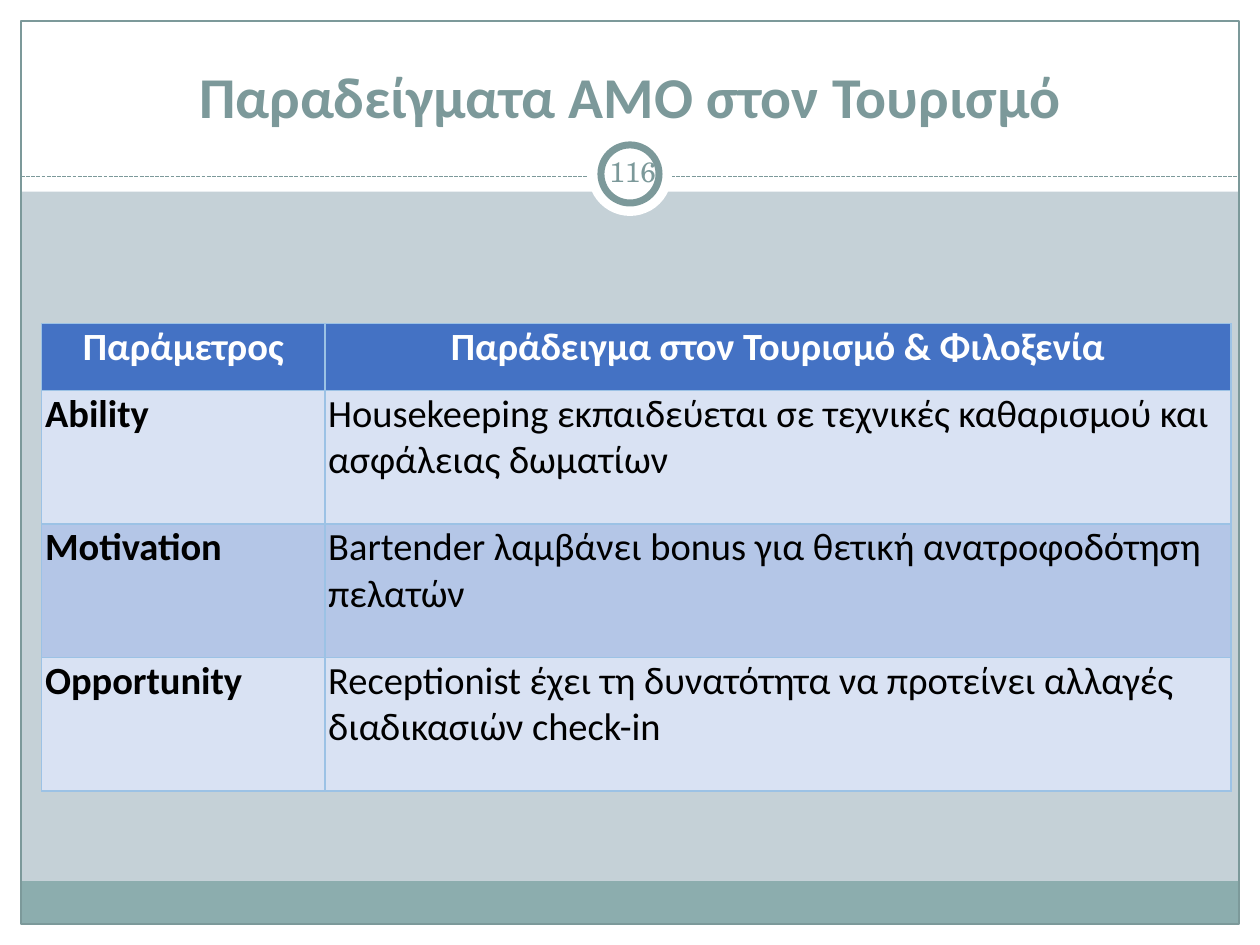
from dataclasses import dataclass
from typing import Optional

from lxml import etree
from pptx import Presentation
from pptx.dml.color import RGBColor
from pptx.enum.dml import MSO_LINE
from pptx.enum.shapes import MSO_CONNECTOR, MSO_SHAPE
from pptx.enum.text import MSO_ANCHOR, PP_ALIGN
from pptx.oxml.ns import qn
from pptx.util import Pt

RECT, OVAL = MSO_SHAPE.RECTANGLE, MSO_SHAPE.OVAL
STRAIGHT = MSO_CONNECTOR.STRAIGHT
DASH = MSO_LINE.SQUARE_DOT
LEFT, CENTER = PP_ALIGN.LEFT, PP_ALIGN.CENTER
TOP, MIDDLE, BOTTOM = MSO_ANCHOR.TOP, MSO_ANCHOR.MIDDLE, MSO_ANCHOR.BOTTOM


@dataclass(frozen=True)
class Theme:
    back: str = "C5D1D7"
    white: str = "FFFFFF"
    black: str = "000000"
    teal: str = "7C999A"
    foot: str = "8CADAE"
    head: str = "4472C4"
    bands: tuple = ("D9E2F3", "B4C6E7")
    grid: str = "9CC2E5"
    sans: str = "Calibri"
    serif: str = "TeX Gyre Schola"
    title: float = 33
    body: float = 22
    number: float = 16
    thin: float = 0.75
    thick: float = 4
    border: float = 1


@dataclass(frozen=True)
class Panel:
    left: float
    top: float
    width: float
    height: float
    fill: Optional[str] = None
    line: Optional[str] = None
    weight: float = 0
    kind: int = RECT


THEME = Theme()
WIDE, HIGH, EDGE = 720, 540, 12
RULE = 100.8  # height of the dashed line and centre of the badge

PANELS = [
    # White margins and header
    Panel(0, HIGH - EDGE, WIDE, EDGE, THEME.white),
    Panel(0, 0, WIDE, 109.6, THEME.white),
    Panel(0, 0, EDGE, HIGH, THEME.white),
    Panel(WIDE - EDGE, 0, EDGE, HIGH, THEME.white),
    # Footer band and frame
    Panel(EDGE, 503.5, WIDE - 2 * EDGE, 24.5, THEME.foot),
    Panel(EDGE, EDGE, WIDE - 2 * EDGE, HIGH - 2 * EDGE,
          line=THEME.teal, weight=THEME.thin),
]


def disc(size: float, **style) -> Panel:
    """A circle centred on the badge."""
    return Panel((WIDE - size) / 2, 99.4 - size / 2, size, size,
                 THEME.white, kind=OVAL, **style)


BADGE = [disc(48), disc(33.2, line=THEME.teal, weight=THEME.thick)]

ROWS = [
    ("Παράμετρος", "Παράδειγμα στον Τουρισμό & Φιλοξενία"),
    ("Ability", "Housekeeping εκπαιδεύεται σε τεχνικές καθαρισμού και "
                "ασφάλειας δωματίων"),
    ("Motivation", "Bartender λαμβάνει bonus για θετική ανατροφοδότηση πελατών"),
    ("Opportunity", "Receptionist έχει τη δυνατότητα να προτείνει αλλαγές "
                    "διαδικασιών check-in"),
]
COLS = (161.8, 517.8)
TALL = (38.2, 76.3, 76.3, 76.3)


def tint(code: str) -> RGBColor:
    return RGBColor.from_string(code)


def write(frame, text: str, *, size: float, color: str, font: str = THEME.sans,
          bold: bool = False, align=LEFT) -> None:
    para = frame.paragraphs[0]
    para.alignment = align
    run = para.add_run()
    run.text = text
    run.font.size, run.font.name, run.font.bold = Pt(size), font, bold
    run.font.color.rgb = tint(color)


def label(slide, box: tuple, text: str, *, anchor, pad: float, **style) -> None:
    frame = slide.shapes.add_textbox(*map(Pt, box)).text_frame
    frame.word_wrap = True
    frame.vertical_anchor = anchor
    frame.margin_left = frame.margin_right = Pt(pad)
    write(frame, text, **style)


def draw(slide, panel: Panel) -> None:
    shape = slide.shapes.add_shape(
        panel.kind, Pt(panel.left), Pt(panel.top),
        Pt(panel.width), Pt(panel.height))
    shape.shadow.inherit = False
    if panel.fill:
        shape.fill.solid()
        shape.fill.fore_color.rgb = tint(panel.fill)
    else:
        shape.fill.background()
    if panel.line:
        shape.line.color.rgb = tint(panel.line)
        shape.line.width = Pt(panel.weight)
    else:
        shape.line.fill.background()


def divide(slide) -> None:
    line = slide.shapes.add_connector(
        STRAIGHT, Pt(EDGE), Pt(RULE), Pt(WIDE - EDGE), Pt(RULE))
    line.line.color.rgb = tint(THEME.teal)
    line.line.width = Pt(THEME.thin)
    line.line.dash_style = DASH
    etree.SubElement(line.element.spPr, qn("a:effectLst"))


def edge(cell) -> None:
    """Border all four sides; borders come before the fill in the XML."""
    props = cell._tc.get_or_add_tcPr()
    for spot, side in enumerate(("a:lnL", "a:lnR", "a:lnT", "a:lnB")):
        line = etree.Element(qn(side), w=str(Pt(THEME.border)))
        fill = etree.SubElement(line, qn("a:solidFill"))
        etree.SubElement(fill, qn("a:srgbClr"), val=THEME.grid)
        props.insert(spot, line)


def tabulate(slide) -> None:
    table = slide.shapes.add_table(
        len(ROWS), len(COLS), Pt(23.8), Pt(185),
        Pt(sum(COLS)), Pt(sum(TALL))).table
    for col, width in zip(table.columns, COLS):
        col.width = Pt(width)
    for r, (row, height) in enumerate(zip(ROWS, TALL)):
        table.rows[r].height = Pt(height)
        top = r == 0
        for c, text in enumerate(row):
            cell = table.cell(r, c)
            cell.fill.solid()
            cell.fill.fore_color.rgb = tint(
                THEME.head if top else THEME.bands[(r - 1) % 2])
            cell.margin_left = cell.margin_right = Pt(2)
            cell.margin_top = cell.margin_bottom = Pt(0)
            cell.vertical_anchor = TOP
            write(cell.text_frame, text, size=THEME.body,
                  color=THEME.white if top else THEME.black,
                  bold=top or c == 0, align=CENTER if top else LEFT)
            edge(cell)


def main() -> None:
    deck = Presentation()
    deck.slide_width, deck.slide_height = Pt(WIDE), Pt(HIGH)
    slide = deck.slides.add_slide(deck.slide_layouts[6])
    slide.background.fill.solid()
    slide.background.fill.fore_color.rgb = tint(THEME.back)

    # Frame, divider and badge
    for panel in PANELS:
        draw(slide, panel)
    divide(slide)
    for panel in BADGE:
        draw(slide, panel)

    # Title, table and page number
    label(slide, (24, 18, 672, 60), "Παραδείγματα AMO στον Τουρισμό",
          anchor=BOTTOM, pad=7.2, size=THEME.title, color=THEME.teal,
          bold=True, align=CENTER)
    tabulate(slide)
    label(slide, (343.5, 80.8, 36, 34.7), "116", anchor=MIDDLE, pad=3.6,
          size=THEME.number, color=THEME.teal, font=THEME.serif, align=CENTER)
    deck.save("out.pptx")


if __name__ == "__main__":
    main()
